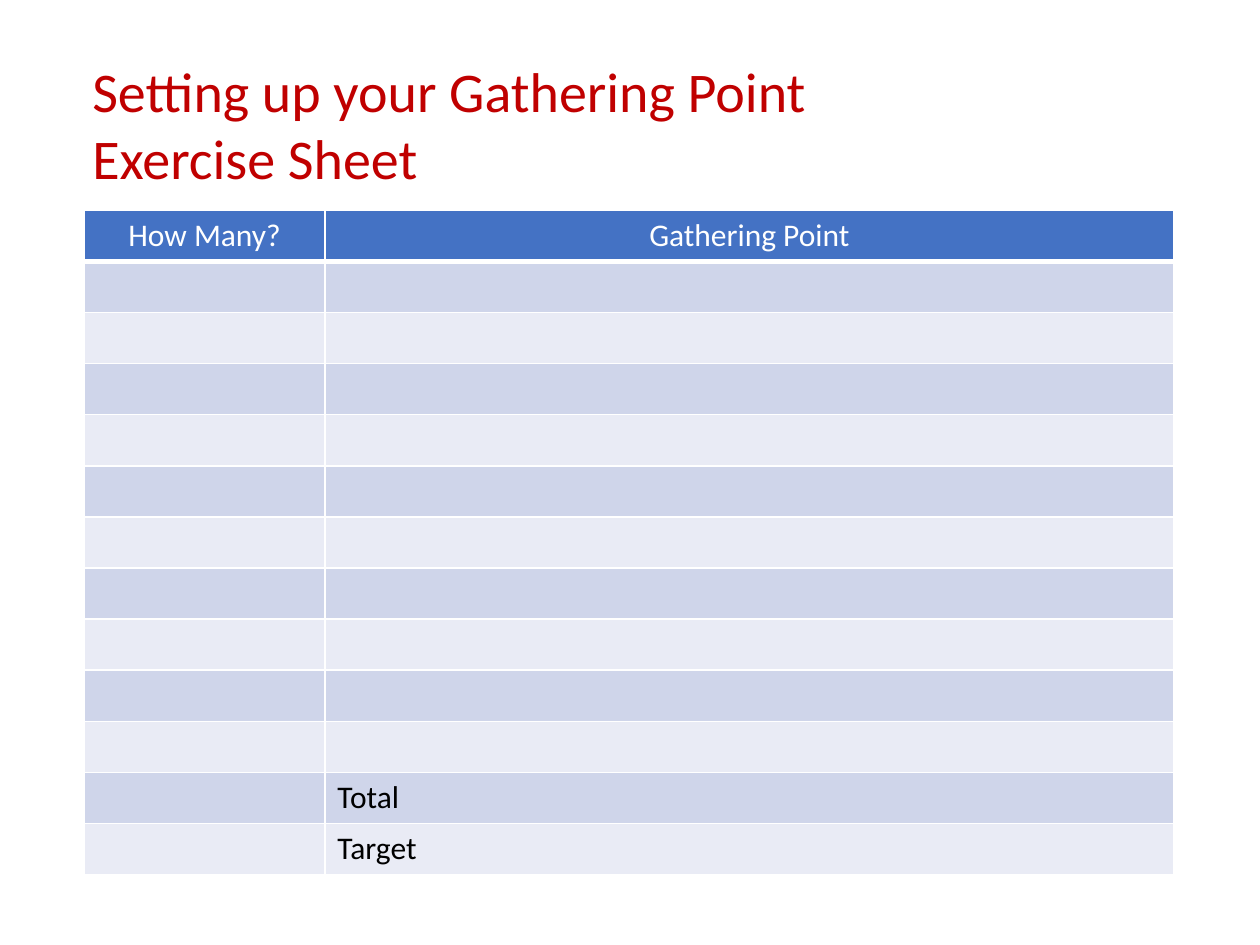
from dataclasses import dataclass

from lxml import etree
from pptx import Presentation
from pptx.dml.color import RGBColor
from pptx.enum.text import MSO_ANCHOR, MSO_AUTO_SIZE, PP_ALIGN
from pptx.oxml.ns import qn
from pptx.util import Cm, Pt

LEFT = PP_ALIGN.LEFT
CENTER = PP_ALIGN.CENTER
TOP = MSO_ANCHOR.TOP
NO_AUTOFIT = MSO_AUTO_SIZE.NONE
TITLE_ONLY = 5

FONT = "Calibri"
RED, BLUE, WHITE, BLACK = "C00000", "4472C4", "FFFFFF", "000000"
BANDS = ("CFD5EA", "E9EBF5")
TITLE_LINES = ("Setting up your Gathering Point", "Exercise Sheet")
BLANK_ROWS = 10
COLUMN_WIDTHS = (4.85, 17.12)
ROW_HEIGHT = 1.03


@dataclass(frozen=True)
class Row:
    texts: tuple[str, str]
    fill: str
    color: str = BLACK
    alignment: PP_ALIGN = LEFT
    bottom_border: float = 1


def rgb(value: str) -> RGBColor:
    return RGBColor.from_string(value)


def format_paragraph(paragraph, size: float, color: str, alignment: PP_ALIGN) -> None:
    paragraph.alignment = alignment
    paragraph.font.name = FONT
    paragraph.font.size = Pt(size)
    paragraph.font.bold = False
    paragraph.font.color.rgb = rgb(color)


def add_borders(cell, bottom_width: float) -> None:
    properties = cell._tc.get_or_add_tcPr()
    widths = {"a:lnL": 1, "a:lnR": 1, "a:lnT": 1, "a:lnB": bottom_width}
    for tag, width in widths.items():
        line = etree.SubElement(properties, qn(tag), w=str(Pt(width)))
        fill = etree.SubElement(line, qn("a:solidFill"))
        etree.SubElement(fill, qn("a:srgbClr"), val=WHITE)


def draw_title(slide) -> None:
    title = slide.shapes.title
    title.left, title.top, title.width, title.height = Cm(1.68), Cm(1.04), Cm(22.05), Cm(4.29)
    frame = title.text_frame
    frame.text = "\n".join(TITLE_LINES)
    frame.auto_size = NO_AUTOFIT
    frame.vertical_anchor = TOP
    frame.margin_left = frame.margin_right = Cm(0.18)
    frame.margin_top = frame.margin_bottom = Cm(0.1)
    for paragraph in frame.paragraphs:
        format_paragraph(paragraph, 32, RED, LEFT)


def draw_table(slide, rows: list[Row]) -> None:
    table = slide.shapes.add_table(
        len(rows), len(COLUMN_WIDTHS), Cm(1.7), Cm(4.24),
        Cm(sum(COLUMN_WIDTHS)), Cm(ROW_HEIGHT * len(rows)),
    ).table
    for column, width in zip(table.columns, COLUMN_WIDTHS):
        column.width = Cm(width)
    for table_row, row in zip(table.rows, rows):
        table_row.height = Cm(ROW_HEIGHT)
        for cell, text in zip(table_row.cells, row.texts):
            cell.text = text
            format_paragraph(cell.text_frame.paragraphs[0], 18, row.color, row.alignment)
            add_borders(cell, row.bottom_border)
            cell.fill.solid()
            cell.fill.fore_color.rgb = rgb(row.fill)


def main() -> None:
    presentation = Presentation()
    presentation.slide_width, presentation.slide_height = Cm(25.4), Cm(19.05)
    slide = presentation.slides.add_slide(presentation.slide_layouts[TITLE_ONLY])
    draw_title(slide)
    labels = [""] * BLANK_ROWS + ["Total", "Target"]
    header = Row(("How Many?", "Gathering Point"), BLUE, WHITE, CENTER, 3)
    body = [Row(("", label), BANDS[index % 2]) for index, label in enumerate(labels)]
    draw_table(slide, [header, *body])
    presentation.save("out.pptx")


if __name__ == "__main__":
    main()
